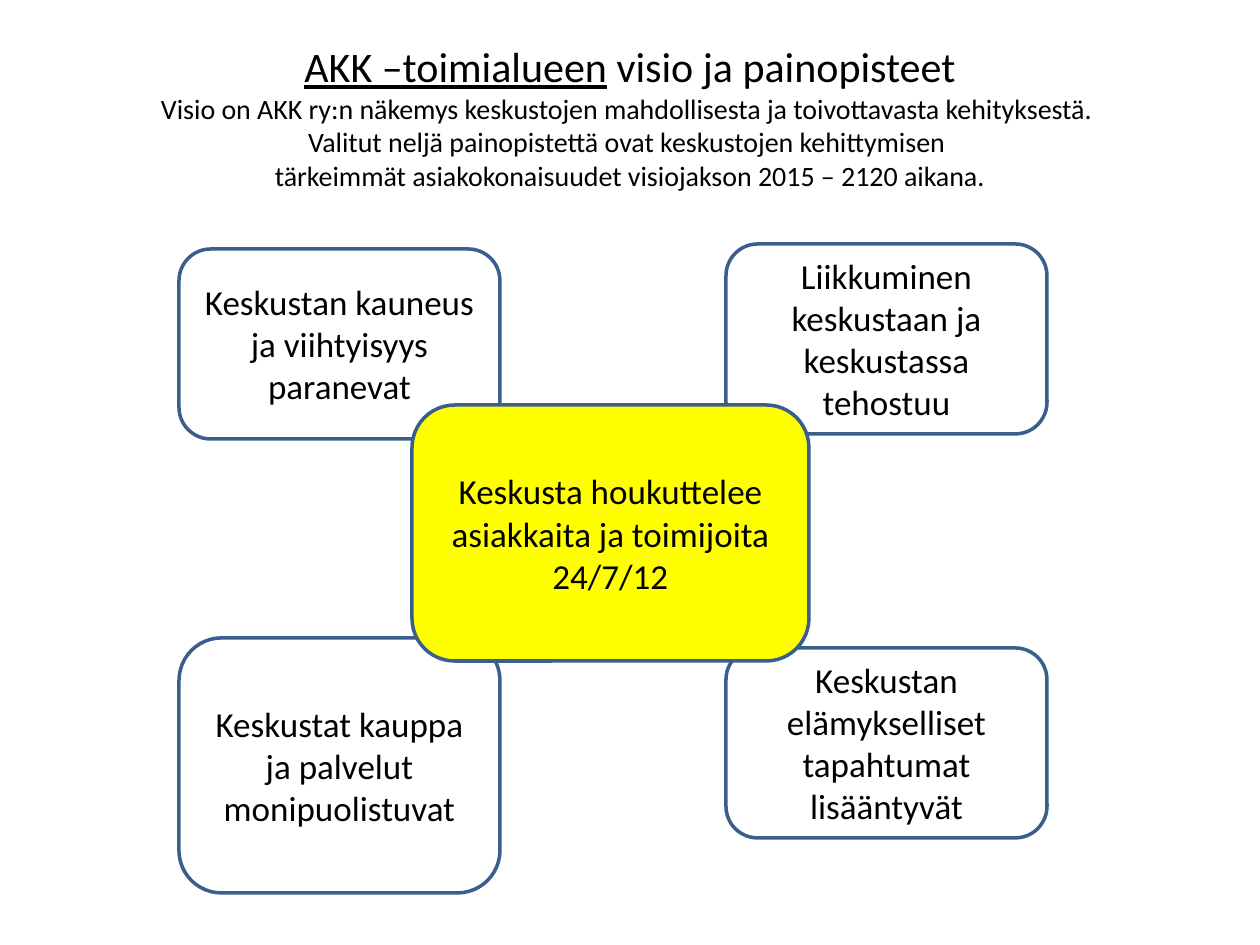
from dataclasses import dataclass

import pptx
import pptx.dml.color
import pptx.enum.shapes
import pptx.enum.text
import pptx.util

PX = 914400 / 126


@dataclass(frozen=True)
class Theme:
    font: str = "Calibri"
    ink: str = "000000"
    outline: str = "3A5F8C"
    plain: str = "FFFFFF"
    accent: str = "FFFF00"
    heading_size: int = 24
    intro_size: int = 16
    box_size: int = 20
    outline_width: int = 2


THEME = Theme()
LEFT, RIGHT = 179, 726
BOX_WIDTH, BOX_HEIGHT, TALL_HEIGHT = 321, 190, 255
HEADING = "AKK –toimialueen"
HEADING_END = " visio ja painopisteet"
INTRO = [
    "Visio on AKK ry:n näkemys keskustojen mahdollisesta ja toivottavasta kehityksestä. ",
    "Valitut neljä painopistettä ovat keskustojen kehittymisen ",
    "tärkeimmät asiakokonaisuudet visiojakson 2015 – 2120 aikana.",
]
FOCUS_AREAS = [
    ("Liikkuminen keskustaan ja keskustassa tehostuu", RIGHT, 244, BOX_HEIGHT),
    ("Keskustan elämykselliset tapahtumat lisääntyvät", RIGHT, 648, BOX_HEIGHT),
    ("Keskustat kauppa ja palvelut monipuolistuvat", LEFT, 638, TALL_HEIGHT),
    ("Keskustan kauneus ja viihtyisyys paranevat", LEFT, 249, BOX_HEIGHT),
]


def px(length):
    return pptx.util.Emu(round(length * PX))


def rgb(colour):
    return pptx.dml.color.RGBColor.from_string(colour)


def add_span(para, text, size, underline=False):
    span = para.add_run()
    span.text = text
    span.font.name = THEME.font
    span.font.size = pptx.util.Pt(size)
    span.font.color.rgb = rgb(THEME.ink)
    span.font.underline = underline


def centre(frame):
    """Centre the frame's text both ways and return its first paragraph."""
    frame.word_wrap = True
    frame.vertical_anchor = pptx.enum.text.MSO_ANCHOR.MIDDLE
    para = frame.paragraphs[0]
    para.alignment = pptx.enum.text.PP_ALIGN.CENTER
    return para


def fill_title(page):
    title = page.shapes.title
    title.left, title.top = px(63), px(38)
    title.width, title.height = px(1134), px(157)
    para = centre(title.text_frame)
    add_span(para, HEADING, THEME.heading_size, underline=True)
    add_span(para, HEADING_END, THEME.heading_size)
    for line in INTRO:
        para.add_line_break()
        add_span(para, line, THEME.intro_size)


def add_box(page, text, left, top, width, height, fill=THEME.plain):
    box = page.shapes.add_shape(
        pptx.enum.shapes.MSO_SHAPE.ROUNDED_RECTANGLE,
        px(left), px(top), px(width), px(height))
    box.shadow.inherit = False
    box.fill.solid()
    box.fill.fore_color.rgb = rgb(fill)
    box.line.color.rgb = rgb(THEME.outline)
    box.line.width = pptx.util.Pt(THEME.outline_width)
    add_span(centre(box.text_frame), text, THEME.box_size)


def main():
    deck = pptx.Presentation()
    deck.slide_width, deck.slide_height = px(1260), px(945)
    page = deck.slides.add_slide(deck.slide_layouts[5])
    fill_title(page)
    for text, left, top, height in FOCUS_AREAS:
        add_box(page, text, left, top, BOX_WIDTH, height)
    add_box(page, "Keskusta houkuttelee asiakkaita ja toimijoita 24/7/12",
            412, 405, 397, 256, fill=THEME.accent)
    deck.save("out.pptx")


if __name__ == "__main__":
    main()
